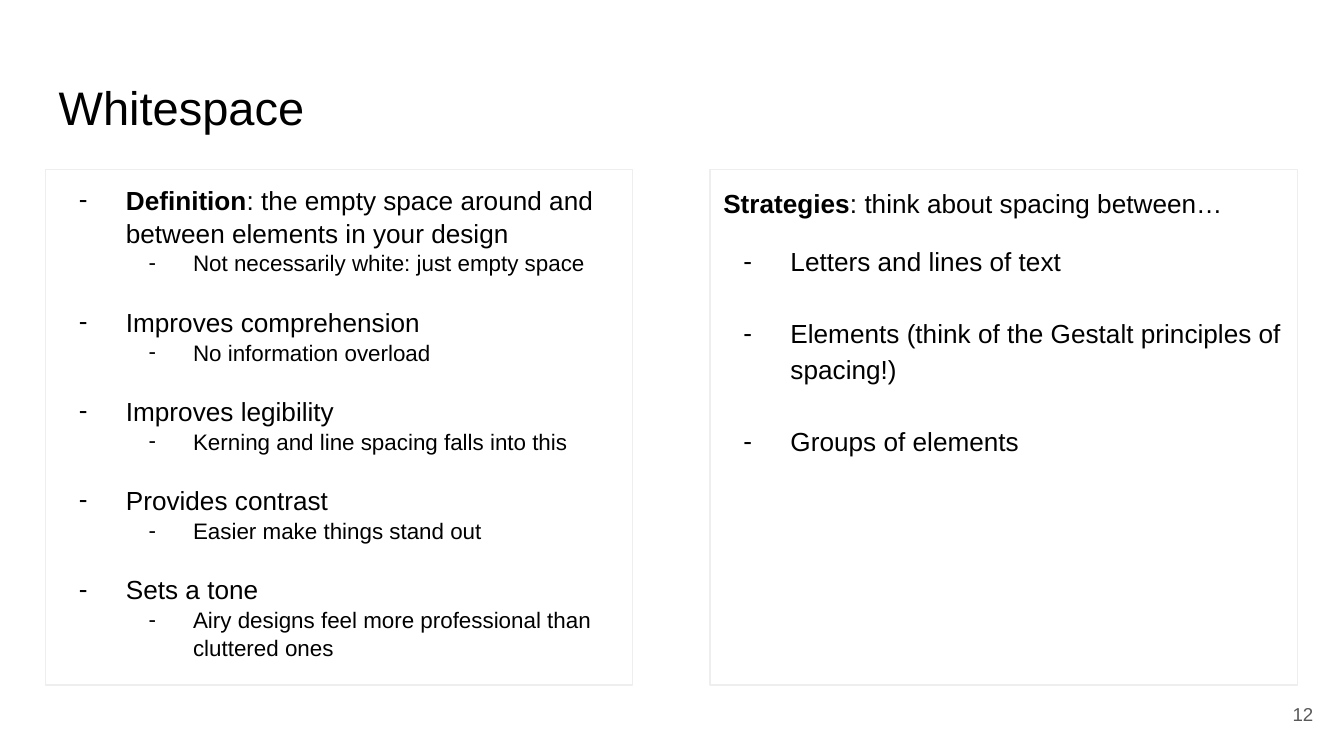
from lxml import etree
from pptx import Presentation
from pptx.dml.color import RGBColor
from pptx.enum import shapes, text
from pptx.oxml import ns
from pptx.util import Cm, Pt

BLACK, GREY, PALE = "000000", "595959", "EEEEEE"
TOP, WIDTH, HEIGHT = 3.2, 11.1, 9.75
LEFT, RIGHT = 0.86, 13.42
# Left margin and hanging indent in cm, by level
INDENT = [(1.27, 0.89), (2.54, 0.84)]

POINTS = [
    (("Definition", ": the empty space around and between elements in your design"),
     "Not necessarily white: just empty space"),
    (("", "Improves comprehension"), "No information overload"),
    (("", "Improves legibility"), "Kerning and line spacing falls into this"),
    (("", "Provides contrast"), "Easier make things stand out"),
    (("", "Sets a tone"), "Airy designs feel more professional than cluttered ones"),
]
TARGETS = [
    "Letters and lines of text",
    "Elements (think of the Gestalt principles of spacing!)",
    "Groups of elements",
]


def color(code):
    return RGBColor.from_string(code)


def setup(frame, anchor=text.MSO_ANCHOR.TOP):
    frame.word_wrap = True
    frame.vertical_anchor = anchor
    frame.margin_left = frame.margin_right = Cm(0.25)
    frame.margin_top = frame.margin_bottom = Cm(0.25)
    return frame


def label(slide, x, y, w, h, anchor=text.MSO_ANCHOR.TOP):
    box = slide.shapes.add_textbox(Cm(x), Cm(y), Cm(w), Cm(h))
    return setup(box.text_frame, anchor)


def panel(slide, x):
    box = slide.shapes.add_shape(
        shapes.MSO_SHAPE.RECTANGLE, Cm(x), Cm(TOP), Cm(WIDTH), Cm(HEIGHT))
    box.shadow.inherit = False
    box.fill.background()
    box.line.color.rgb = color(PALE)
    box.line.width = Pt(0.75)
    return setup(box.text_frame)


def run(para, words, size, code=BLACK, bold=False):
    part = para.add_run()
    part.text = words
    part.font.name = "Arial"
    part.font.size = Pt(size)
    part.font.bold = bold
    part.font.color.rgb = color(code)


def line(frame, spacing, before=0, after=0):
    """Return the next paragraph, using the empty first one if it is free."""
    first = frame.paragraphs[0]
    para = frame.add_paragraph() if first.runs else first
    para.alignment = text.PP_ALIGN.LEFT
    para.line_spacing = spacing
    para.space_before, para.space_after = Pt(before), Pt(after)
    return para


def dash(para, level=0):
    """Give the paragraph a hanging dash bullet."""
    para.level = level
    margin, hang = INDENT[level]
    props = para._p.get_or_add_pPr()
    props.set("marL", str(Cm(margin)))
    props.set("indent", str(-Cm(hang)))
    tint = etree.SubElement(props, ns.qn("a:buClr"))
    etree.SubElement(tint, ns.qn("a:srgbClr"), val=BLACK)
    etree.SubElement(props, ns.qn("a:buFont"), typeface="Arial")
    etree.SubElement(props, ns.qn("a:buChar"), char="-")


def lead(para, bold, plain):
    if bold:
        run(para, bold, 14, bold=True)
    run(para, plain, 14)


def benefits(slide):
    frame = panel(slide, LEFT)
    for head, detail in POINTS:
        para = line(frame, 1.05)
        dash(para)
        lead(para, *head)
        para = line(frame, 1.05, after=15)
        dash(para, 1)
        run(para, detail, 12)
    para.space_after = Pt(0)


def tactics(slide):
    frame = panel(slide, RIGHT)
    lead(line(frame, 1.15), "Strategies", ": think about spacing between…")
    for num, target in enumerate(TARGETS):
        para = line(frame, 1.15, before=19.3 if num else 12)
        dash(para)
        run(para, target, 14)


def main():
    deck = Presentation()
    deck.slide_width, deck.slide_height = Cm(25.4), Cm(14.29)
    slide = deck.slides.add_slide(deck.slide_layouts[6])
    title = label(slide, LEFT, 1.24, 23.67, 1.6)
    run(line(title, 1.0), "Whitespace", 25.2)
    benefits(slide)
    number = label(slide, 23.55, 12.95, 1.52, 1.09, text.MSO_ANCHOR.MIDDLE)
    para = line(number, 1.0)
    para.alignment = text.PP_ALIGN.RIGHT
    run(para, "12", 10, GREY)
    tactics(slide)
    deck.save("out.pptx")


if __name__ == "__main__":
    main()
